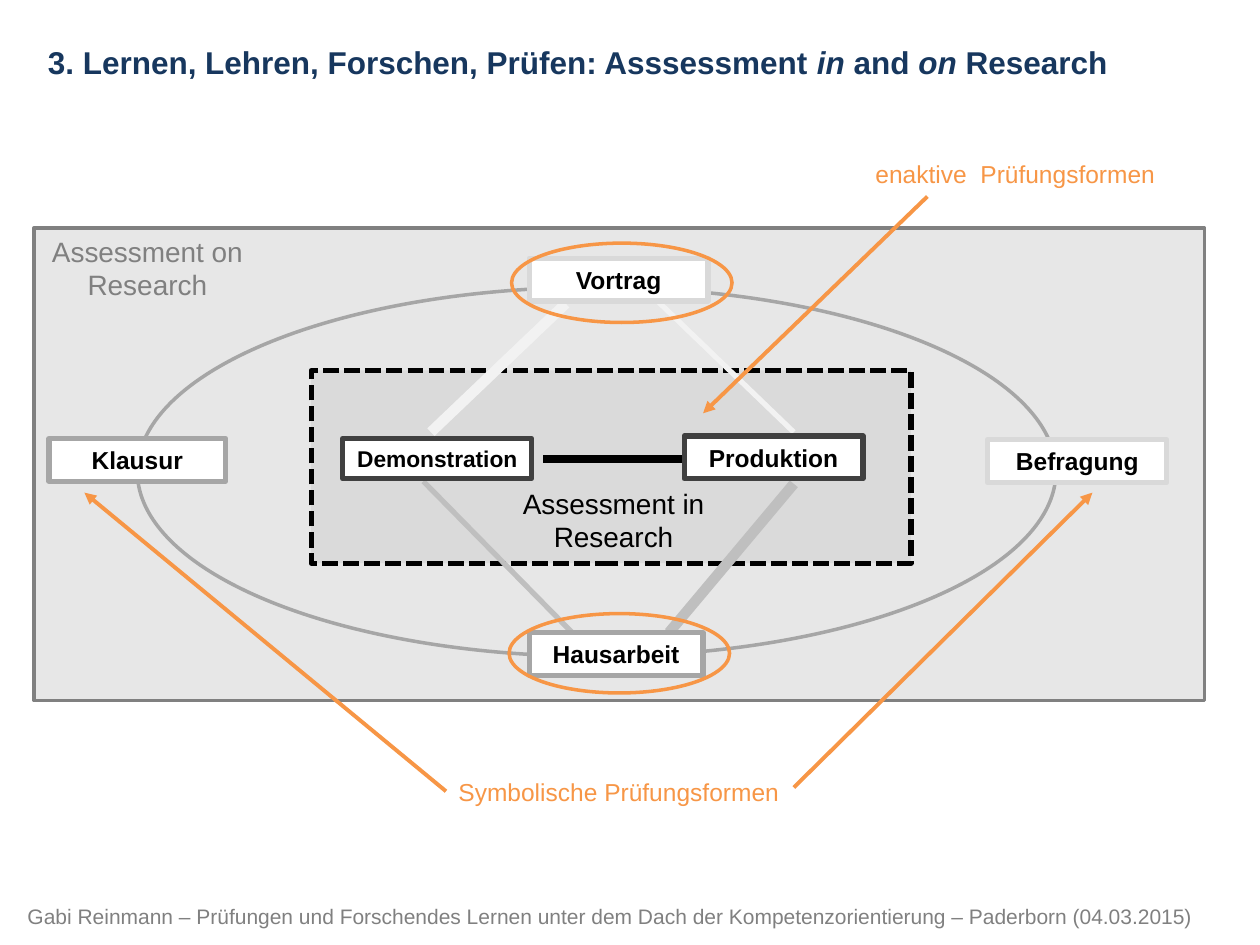
from lxml.etree import SubElement
from pptx import Presentation
from pptx.dml.color import RGBColor
from pptx.enum.dml import MSO_LINE
from pptx.enum.shapes import MSO_CONNECTOR, MSO_SHAPE
from pptx.enum.text import MSO_ANCHOR, MSO_AUTO_SIZE, PP_ALIGN
from pptx.oxml.ns import qn
from pptx.util import Pt

PX = 9144  # 100 px to the inch

BLACK = RGBColor(0x00, 0x00, 0x00)
WHITE = RGBColor(0xFF, 0xFF, 0xFF)
NAVY = RGBColor(0x17, 0x37, 0x5E)
ORANGE = RGBColor(0xF7, 0x96, 0x46)
CHARCOAL = RGBColor(0x40, 0x40, 0x40)
GREY = RGBColor(0x80, 0x80, 0x80)
MID_GREY = RGBColor(0xA6, 0xA6, 0xA6)
SILVER = RGBColor(0xBF, 0xBF, 0xBF)
INNER_GREY = RGBColor(0xC4, 0xC4, 0xC4)
LIGHT_GREY = RGBColor(0xD9, 0xD9, 0xD9)
PALE_GREY = RGBColor(0xF2, 0xF2, 0xF2)


def add_outlined(kind, box, color, width, fill=None):
    shape = slide.shapes.add_shape(kind, *[n * PX for n in box])
    shape.shadow.inherit = False
    shape.line.color.rgb = color
    shape.line.width = Pt(width)
    if fill is None:
        shape.fill.background()
    else:
        shape.fill.solid()
        shape.fill.fore_color.rgb = fill
    return shape


def add_line(ends, color, width):
    line = slide.shapes.add_connector(MSO_CONNECTOR.STRAIGHT, *[n * PX for n in ends])
    line.line.color.rgb = color
    line.line.width = Pt(width)
    SubElement(line._element.spPr, qn("a:effectLst"))
    return line


prs = Presentation()
prs.slide_width = 1000 * PX
prs.slide_height = 750 * PX
slide = prs.slides.add_slide(prs.slide_layouts[5])

# Title
title = slide.shapes.title
title.left, title.top, title.width, title.height = [n * PX for n in (28, 29, 869, 40)]
title.text_frame.word_wrap = False
title.text_frame.auto_size = MSO_AUTO_SIZE.NONE
heading = title.text_frame.paragraphs[0]
heading.alignment = PP_ALIGN.LEFT
for words, italic in [
    ("3. Lernen, Lehren, Forschen, Prüfen: Asssessment ", False),
    ("in ", True),
    ("and ", False),
    ("on", True),
    (" Research", False),
]:
    run = heading.add_run()
    run.text = words
    run.font.color.rgb = NAVY
    for key, value in {"name": "Arial", "size": Pt(18), "bold": True, "italic": italic}.items():
        setattr(run.font, key, value)

# Outer and inner assessment areas, and the ring through the outer exam forms
outer = add_outlined(MSO_SHAPE.RECTANGLE, (27, 181, 929, 375), GREY, 2, SILVER)
inner = add_outlined(MSO_SHAPE.RECTANGLE, (247, 294, 476, 153), BLACK, 3, INNER_GREY)
inner.line.dash_style = MSO_LINE.SQUARE_DOT
for area in (outer, inner):
    tint = area._element.spPr.find(qn("a:solidFill")).find(qn("a:srgbClr"))
    SubElement(tint, qn("a:alpha"), val="37000")
add_outlined(MSO_SHAPE.OVAL, (109, 228, 729, 293), MID_GREY, 2)

# Links between the exam forms
for ends, color, width in [
    ((431, 364, 541, 364), BLACK, 4.5),
    ((523, 240, 630, 343), PALE_GREY, 3),
    ((449, 241, 342, 343), PALE_GREY, 6),
    ((336, 382, 454, 502), SILVER, 3),
    ((630, 384, 531, 502), SILVER, 6),
]:
    add_line(ends, color, width)

# Exam forms
for name, box, color, size in [
    ("Befragung", (784, 349, 142, 34), LIGHT_GREY, 14),
    ("Vortrag", (420, 205, 142, 34), LIGHT_GREY, 14),
    ("Klausur", (39, 348, 140, 34), MID_GREY, 14),
    ("Hausarbeit", (420, 502, 138, 34), MID_GREY, 14),
    ("Demonstration", (272, 348, 150, 32), CHARCOAL, 13),
    ("Produktion", (543, 346, 142, 34), CHARCOAL, 14),
]:
    exam_form = add_outlined(MSO_SHAPE.RECTANGLE, box, color, 3, WHITE)
    exam_form.text_frame.vertical_anchor = MSO_ANCHOR.MIDDLE
    label = exam_form.text_frame.paragraphs[0]
    label.text = name
    label.alignment = PP_ALIGN.CENTER
    label.font.color.rgb = BLACK
    for key, value in {"name": "Arial", "size": Pt(size), "bold": True}.items():
        setattr(label.font, key, value)

# Area captions, orange notes and footer
for words, box, color, size, align, wrap in [
    ("Assessment in Research", (394, 381, 186, 64), BLACK, 16, PP_ALIGN.CENTER, True),
    ("Assessment on Research", (27, 181, 180, 64), GREY, 16, PP_ALIGN.CENTER, True),
    ("enaktive  Prüfungsformen", (685, 121, 243, 34), ORANGE, 14, PP_ALIGN.LEFT, False),
    ("Symbolische Prüfungsformen", (354, 612, 276, 34), ORANGE, 14, PP_ALIGN.LEFT, False),
    ("Gabi Reinmann – Prüfungen und Forschendes Lernen unter dem Dach der "
     "Kompetenzorientierung – Paderborn (04.03.2015)",
     (12, 712, 946, 30), GREY, 12, PP_ALIGN.LEFT, False),
]:
    frame = slide.shapes.add_textbox(*[n * PX for n in box]).text_frame
    frame.word_wrap = wrap
    caption = frame.paragraphs[0]
    caption.text = words
    caption.alignment = align
    caption.font.name = "Arial"
    caption.font.size = Pt(size)
    caption.font.color.rgb = color

# Arrows from the notes, with the head at the start point
for ends in [(558, 328, 736, 156), (67, 391, 354, 628), (867, 391, 630, 625)]:
    arrow = add_line(ends, ORANGE, 2.25)
    SubElement(arrow.line._get_or_add_ln(), qn("a:headEnd"), type="triangle")

# Rings around Vortrag and Hausarbeit
for left, top in [(406, 193), (404, 487)]:
    add_outlined(MSO_SHAPE.OVAL, (left, top, 175, 63), ORANGE, 2)

prs.save("out.pptx")
